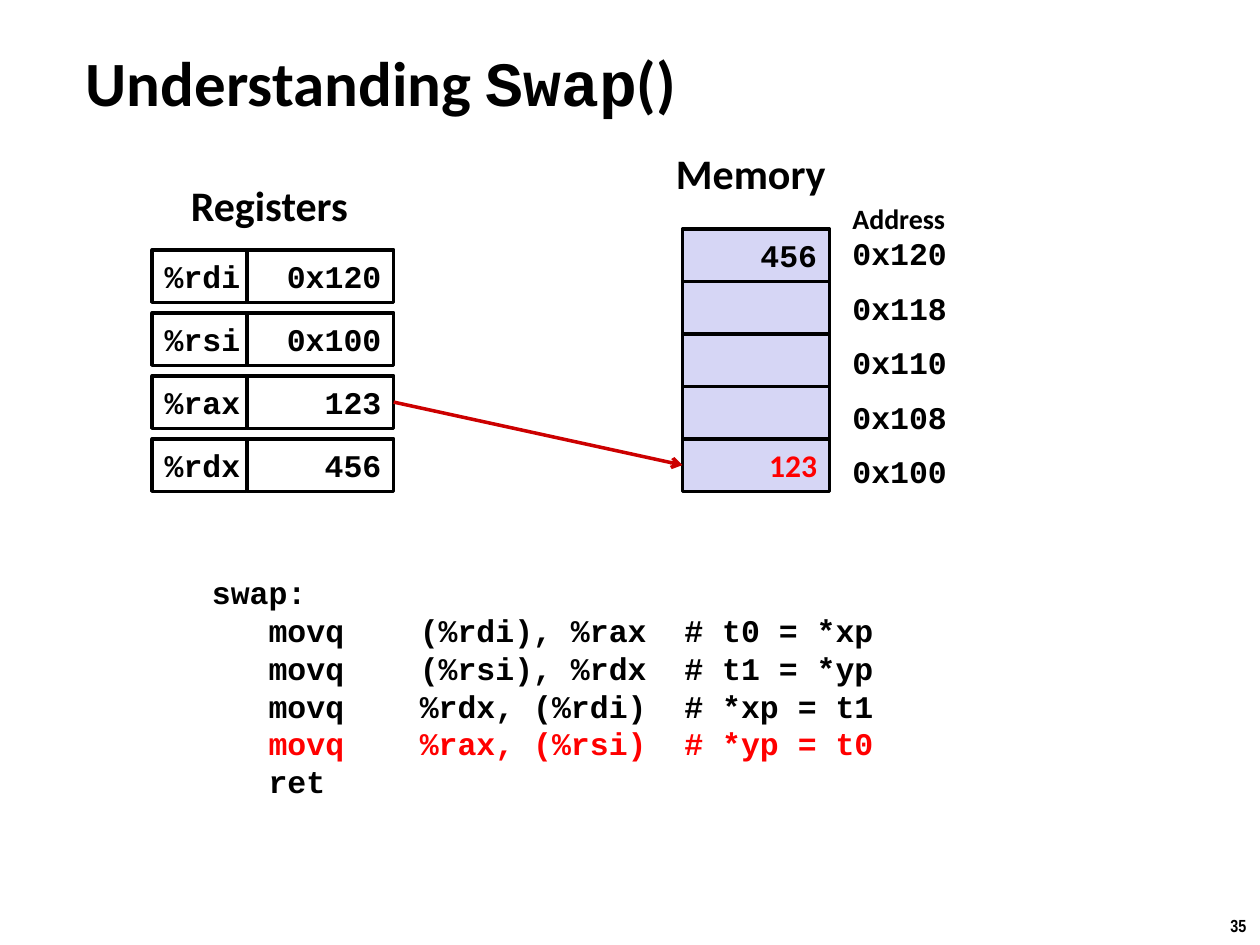
import pptx
import pptx.util
import pptx.dml.color
import pptx.enum.shapes
import pptx.enum.text
import pptx.oxml
import pptx.oxml.ns
from lxml import etree

BLACK = pptx.dml.color.RGBColor(0x00, 0x00, 0x00)
WHITE = pptx.dml.color.RGBColor(0xFF, 0xFF, 0xFF)
LAVENDER = pptx.dml.color.RGBColor(0xD6, 0xD6, 0xF5)
RED = pptx.dml.color.RGBColor(0xFF, 0x00, 0x00)
ARROW_RED = pptx.dml.color.RGBColor(0xCC, 0x00, 0x00)

LEFT = pptx.enum.text.PP_ALIGN.LEFT
RIGHT = pptx.enum.text.PP_ALIGN.RIGHT
CENTER = pptx.enum.text.PP_ALIGN.CENTER
MIDDLE = pptx.enum.text.MSO_ANCHOR.MIDDLE

UNIT = pptx.util.Inches(10) // 120
CELL_ROWS = 5
VALUE_COLUMNS = 14

REGISTERS = [("%rdi", "0x120"), ("%rsi", "0x100"), ("%rax", "123"), ("%rdx", "456")]
MEMORY = [
    ("0x120", "456"), ("0x118", ""), ("0x110", ""), ("0x108", ""), ("0x100", "123"),
]
CODE = [
    "swap:",
    "\tmovq\t(%rdi), %rax\t# t0 = *xp",
    "\tmovq\t(%rsi), %rdx\t# t1 = *yp",
    "\tmovq\t%rdx, (%rdi)\t# *xp = t1",
    "\tmovq\t%rax, (%rsi)\t# *yp = t0",
    "\tret",
]
CURRENT_LINE = 4
CODE_TABS = (0.45, 1.65, 3.75)


def on_grid(*lengths):
    """Turn grid columns and rows into slide lengths."""
    return [round(length * UNIT) for length in lengths]


def style(run, size=18, font="Courier New", color=BLACK):
    """Format one run in bold."""
    run.font.size = pptx.util.Pt(size)
    run.font.name = font
    run.font.bold = True
    run.font.color.rgb = color


def add_label(shapes, box, text, align=LEFT, wrap=False, **look):
    """Place a one-line text box and return it."""
    label = shapes.add_textbox(*on_grid(*box))
    label.text_frame.word_wrap = wrap
    line = label.text_frame.paragraphs[0]
    line.text = text
    line.alignment = align
    style(line.runs[0], **look)
    return label


def add_cell(shapes, box, text, fill, align=RIGHT, **look):
    """Place an outlined cell and return it."""
    cell = shapes.add_shape(pptx.enum.shapes.MSO_SHAPE.RECTANGLE, *on_grid(*box))
    cell.shadow.inherit = False
    cell.fill.solid()
    cell.fill.fore_color.rgb = fill
    cell.line.color.rgb = BLACK
    cell.line.width = pptx.util.Pt(2)
    cell.text_frame.word_wrap = False
    cell.text_frame.vertical_anchor = MIDDLE
    line = cell.text_frame.paragraphs[0]
    line.text = text
    line.alignment = align
    for run in line.runs:
        style(run, **look)
    return cell


def add_title(slide, box):
    """Place the heading with its function name in code type."""
    title = slide.shapes.add_textbox(*on_grid(*box))
    title.text_frame.word_wrap = True
    title.text_frame.vertical_anchor = MIDDLE
    heading = title.text_frame.paragraphs[0]
    for text, font in (
        ("Understanding ", "Calibri"), ("Swap", "Courier New"), ("()", "Calibri"),
    ):
        run = heading.add_run()
        run.text = text
        style(run, 36, font)


def add_registers(slide, left, top):
    """Place the register file and return its value cells by name."""
    add_label(slide.shapes, (left + 2.5, top - 7.3, 17.8, 6), "Registers",
              size=24, font="Calibri")
    registers = slide.shapes.add_group_shape().shapes
    name_columns, pitch = 9, 6
    values = {}
    for index, (name, value) in enumerate(REGISTERS):
        row = top + index * pitch
        add_cell(registers, (left, row, name_columns, CELL_ROWS), name, WHITE, LEFT)
        values[name] = add_cell(
            registers, (left + name_columns, row, VALUE_COLUMNS, CELL_ROWS), value, WHITE)
    return values


def add_memory(slide, left, top):
    """Place the memory column with addresses and return cells by address."""
    add_label(slide.shapes, (left - 1.8, top - 8.3, 16.8, 6), "Memory",
              size=24, font="Calibri")
    addresses = slide.shapes.add_group_shape().shapes
    address_left, address_columns, address_pitch = left + 15, 16, 5.2
    add_label(addresses, (address_left, top - 3.2, address_columns, 4.4), "Address",
              wrap=True, size=16, font="Calibri")
    cells = {}
    for index, (address, value) in enumerate(MEMORY):
        look = {"font": "Calibri", "color": RED} if address == "0x100" else {}
        cells[address] = add_cell(
            slide.shapes, (left, top + index * CELL_ROWS, VALUE_COLUMNS, CELL_ROWS),
            value, LAVENDER, **look)
        add_label(addresses, (address_left, top - 0.1 + index * address_pitch,
                              address_columns, 4.8), address, wrap=True)
    return cells


def add_store_arrow(slide, register, cell):
    """Join a register value to the memory cell it is written to."""
    arrow = slide.shapes.add_connector(
        pptx.enum.shapes.MSO_CONNECTOR.STRAIGHT, 0, 0, 0, 0)
    arrow.begin_connect(register, 3)
    arrow.end_connect(cell, 1)
    arrow.line.color.rgb = ARROW_RED
    arrow.line.width = pptx.util.Pt(2)
    etree.SubElement(arrow.line._get_or_add_ln(),
                     pptx.oxml.ns.qn("a:tailEnd"), type="arrow")
    etree.SubElement(arrow._element.spPr, pptx.oxml.ns.qn("a:effectLst"))


def add_code(slide, box):
    """Place the assembly listing with its current line in red."""
    listing = slide.shapes.add_textbox(*on_grid(*box)).text_frame
    listing.word_wrap = True
    listing.text = "\n".join(CODE)
    for index, line in enumerate(listing.paragraphs):
        stops = etree.SubElement(line._p.get_or_add_pPr(), pptx.oxml.ns.qn("a:tabLst"))
        for stop in CODE_TABS:
            etree.SubElement(stops, pptx.oxml.ns.qn("a:tab"),
                             pos=str(pptx.util.Inches(stop)), algn="l")
        for run in line.runs:
            style(run, color=RED if index == CURRENT_LINE else BLACK)


def main():
    """Build and save the slide."""
    deck = pptx.Presentation()
    deck.slide_width, deck.slide_height = on_grid(120, 90)
    slide = deck.slides.add_slide(deck.slide_layouts[6])
    add_label(slide.shapes, (115.9, 86.6, 4.1, 3.3), "35", CENTER,
              size=10, font="Arial Narrow")
    add_title(slide, (7, 4, 83.6, 7.5))
    values = add_registers(slide, 14.5, 23.8)
    cells = add_memory(slide, 65, 21.8)
    add_store_arrow(slide, values["%rax"], cells["0x100"])
    add_code(slide, (19, 54, 77, 23))
    deck.save("out.pptx")


if __name__ == "__main__":
    main()
